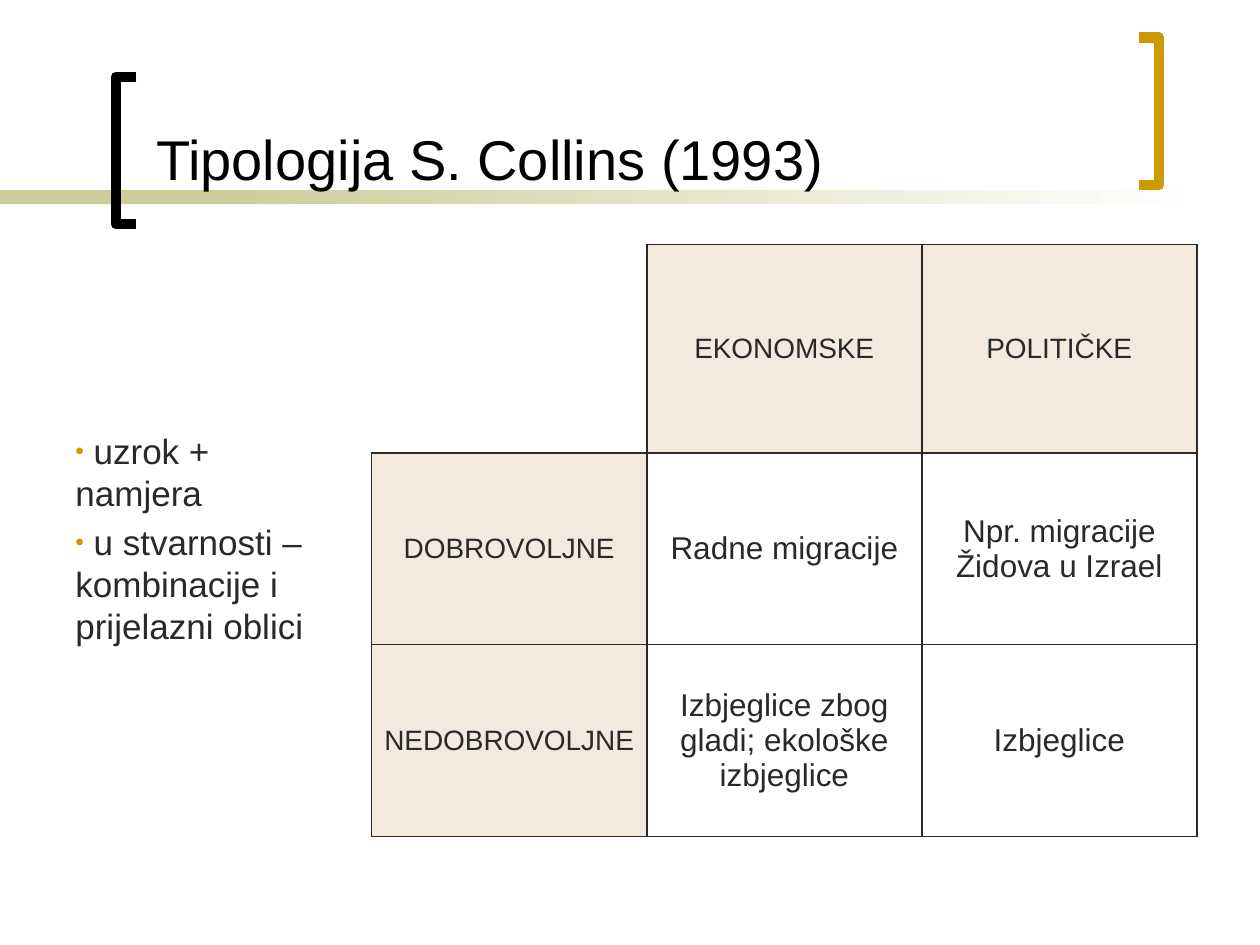
from lxml import etree
from pptx import Presentation, util as u
from pptx.dml import color
from pptx.enum import shapes, text
from pptx.oxml import ns

INK, BLACK, GOLD, SAGE, SAND = "292929", "000000", "CC9900", "CCCC99", "F3EADD"
FONT = "Arial"
ROWS = [
    ["", "EKONOMSKE", "POLITIČKE"],
    ["DOBROVOLJNE", "Radne migracije", "Npr. migracije Židova u Izrael"],
    ["NEDOBROVOLJNE", "Izbjeglice zbog gladi; ekološke izbjeglice", "Izbjeglice"],
]
NOTES = [" uzrok + namjera", " u stvarnosti –kombinacije i prijelazni oblici"]


def rgb(hex_value):
    return color.RGBColor.from_string(hex_value)


def inches(*lengths):
    return [u.Inches(length) for length in lengths]


def add_xml(parent, tag, **attributes):
    return etree.SubElement(parent, ns.qn(tag), attributes)


def style_runs(paragraph, size, ink):
    for run in paragraph.runs:
        run.font.name, run.font.size = FONT, u.Pt(size)
        run.font.color.rgb = rgb(ink)


def draw_band(slide, left, top, width, height, solid_share):
    """A rule that is solid at first and then fades to white."""
    solid_width = width * solid_share
    fade_left = left + width / 6
    solid = (left, solid_width)
    fading = (fade_left, left + width - fade_left)
    for part_left, part_width in (solid, fading):
        part = slide.shapes.add_shape(
            shapes.MSO_SHAPE.RECTANGLE, *inches(part_left, top, part_width, height))
        part.shadow.inherit = False
        part.line.fill.background()
        if part_left == left:
            part.fill.solid()
            part.fill.fore_color.rgb = rgb(SAGE)
        else:
            part.fill.gradient()
            part.fill.gradient_angle = 0
            for stop, tone, position in zip(part.fill.gradient_stops, (SAGE, "FFFFFF"), (0, 1)):
                stop.color.rgb, stop.position = rgb(tone), position


def draw_bracket(slide, left, top, width, height, ink, opens_right):
    tips, spine = (left + width, left) if opens_right else (left, left + width)
    corners = [(tips, top), (spine, top), (spine, top + height), (tips, top + height)]
    points = [tuple(inches(*corner)) for corner in corners]
    builder = slide.shapes.build_freeform(*points[0])
    builder.add_line_segments(points[1:], close=False)
    bracket = builder.convert_to_shape()
    bracket.shadow.inherit = False
    bracket.fill.background()
    bracket.line.color.rgb, bracket.line.width = rgb(ink), u.Pt(6)


def draw_title(slide, *box):
    frame = slide.shapes.add_textbox(*inches(*box)).text_frame
    frame.word_wrap, frame.vertical_anchor = True, text.MSO_ANCHOR.BOTTOM
    frame.text = "Tipologija S. Collins (1993)"
    style_runs(frame.paragraphs[0], 32, BLACK)


def draw_notes(slide, *box):
    frame = slide.shapes.add_textbox(*inches(*box)).text_frame
    frame.word_wrap = True
    frame.text = "\n".join(NOTES)
    for note in frame.paragraphs:
        style_runs(note, 20, INK)
        note.space_before = u.Pt(4)
        properties = note._p.get_or_add_pPr()
        properties.set("marL", "0")
        properties.set("indent", "0")
        add_xml(add_xml(properties, "a:buClr"), "a:srgbClr", val=GOLD)
        add_xml(properties, "a:buSzPct", val="70000")
        add_xml(properties, "a:buFont", typeface=FONT)
        add_xml(properties, "a:buChar", char="•")


def set_borders(cell, visible_sides):
    properties = cell._tc.get_or_add_tcPr()
    for index, side in enumerate("LRTB"):
        border = etree.Element(ns.qn(f"a:ln{side}"), w=str(u.Pt(1)))
        if side in visible_sides:
            add_xml(add_xml(border, "a:solidFill"), "a:srgbClr", val=INK)
        else:
            add_xml(border, "a:noFill")
        properties.insert(index, border)


def draw_typology(slide, left, top, width, height):
    table = slide.shapes.add_table(
        len(ROWS), len(ROWS[0]), *inches(left, top, width, height)).table
    table.first_row = table.horz_banding = False
    for column in table.columns:
        column.width = u.Inches(width / len(ROWS[0]))
    for row, share in zip(table.rows, (0.352, 0.324, 0.324)):
        row.height = u.Inches(height * share)
    for r, labels in enumerate(ROWS):
        for c, label in enumerate(labels):
            cell = table.cell(r, c)
            is_corner = r == c == 0
            is_heading = (r == 0) != (c == 0)
            if is_heading:
                cell.fill.solid()
                cell.fill.fore_color.rgb = rgb(SAND)
            else:
                cell.fill.background()
            set_borders(cell, "RB" if is_corner else "LRTB")
            cell.margin_left = cell.margin_right = u.Inches(0.07)
            cell.vertical_anchor = text.MSO_ANCHOR.MIDDLE
            cell.text_frame.text = label
            paragraph = cell.text_frame.paragraphs[0]
            paragraph.alignment = text.PP_ALIGN.CENTER
            style_runs(paragraph, 16 if is_heading else 18, INK)


def main():
    deck = Presentation()
    deck.slide_width, deck.slide_height = inches(10, 7.5)
    slide = deck.slides.add_slide(deck.slide_layouts[6])
    draw_band(slide, 0, 1.51, 9.5, 0.11, 0.245)
    draw_bracket(slide, 0.92, 0.61, 0.16, 1.17, BLACK, opens_right=True)
    draw_bracket(slide, 9.04, 0.3, 0.16, 1.17, GOLD, opens_right=False)
    draw_title(slide, 1.14, 0.3, 7.8, 1.27)
    draw_typology(slide, 2.95, 1.94, 6.55, 4.7)
    draw_notes(slide, 0.5, 3.36, 2.06, 3.34)
    deck.save("out.pptx")


if __name__ == "__main__":
    main()
